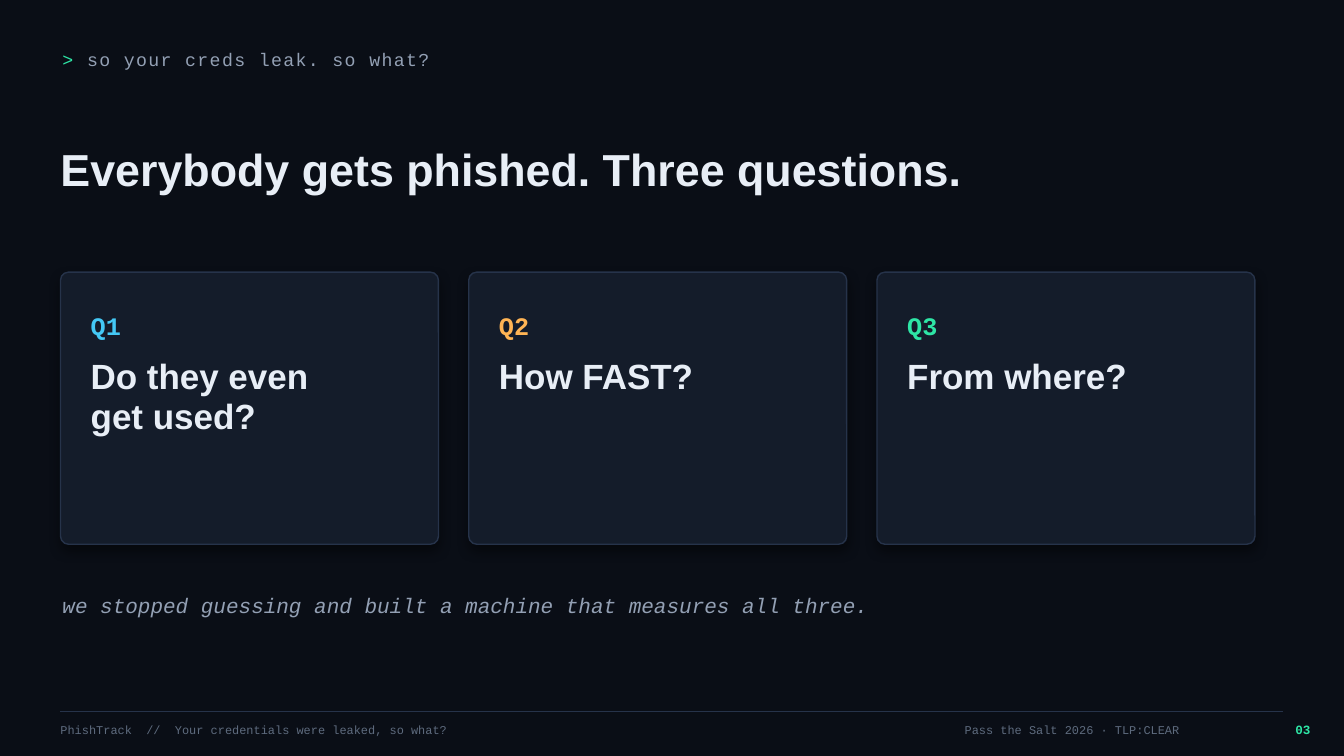
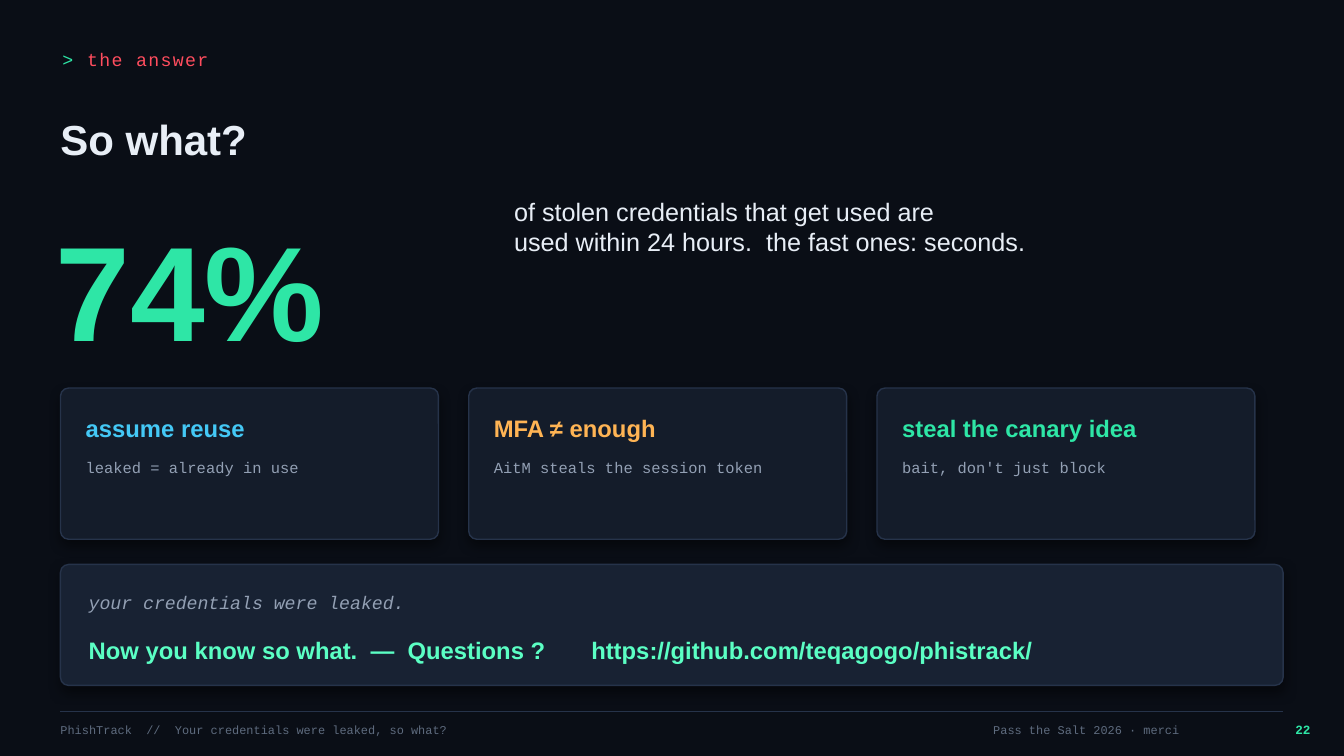
from lxml import etree
from pptx import Presentation
from pptx.dml.color import RGBColor
from pptx.enum import shapes, text
from pptx.oxml.ns import qn
from pptx.util import Pt

# Colours and fonts
BG = RGBColor(0x0A, 0x0E, 0x16)
CARD = RGBColor(0x14, 0x1C, 0x2A)
PANEL = RGBColor(0x18, 0x22, 0x33)
EDGE = RGBColor(0x26, 0x33, 0x4A)
WHITE = RGBColor(0xE8, 0xEE, 0xF6)
MUTED = RGBColor(0x93, 0xA0, 0xB4)
DIM = RGBColor(0x5E, 0x6B, 0x7E)
BLUE = RGBColor(0x44, 0xC8, 0xF5)
ORANGE = RGBColor(0xFF, 0xB4, 0x54)
GREEN = RGBColor(0x2E, 0xE6, 0xA6)
MINT = RGBColor(0x5B, 0xFF, 0xC4)
RED = RGBColor(0xFF, 0x4D, 0x5E)
SANS, MONO = "Arial", "Courier New"

# Layout, in points
LEFT, WIDTH = 43.2, 873.36
CARD_W, CARD_GAP = 270, 21.6
RADIUS = 5.76
ACCENTS = [BLUE, ORANGE, GREEN]

# Content
FOOTER = "PhishTrack  //  Your credentials were leaked, so what?"
QUESTIONS = {
    "kicker": "so your creds leak. so what?",
    "title": "Everybody gets phished. Three questions.",
    "cards": [
        ("Q1", "Do they even\nget used?"),
        ("Q2", "How FAST?"),
        ("Q3", "From where?"),
    ],
    "closing": "we stopped guessing and built a machine that measures all three.",
    "event": "Pass the Salt 2026 · TLP:CLEAR",
    "number": "03",
}
ANSWER = {
    "kicker": "the answer",
    "title": "So what?",
    "figure": "74%",
    "claim": "of stolen credentials that get used are\n"
             "used within 24 hours.  the fast ones: seconds.",
    "cards": [
        ("assume reuse", "leaked = already in use"),
        ("MFA ≠ enough", "AitM steals the session token"),
        ("steal the canary idea", "bait, don't just block"),
    ],
    "recap": "your credentials were leaked.",
    "closing": "Now you know so what.  —  Questions ?\t"
               "https://github.com/teqagogo/phistrack/",
    "event": "Pass the Salt 2026 · merci",
    "number": "22",
}


def style(r, size, color, font=SANS, bold=False, italic=False):
    f = r.font
    f.size, f.name, f.bold, f.italic = Pt(size), font, bold, italic
    f.color.rgb = color


def add_text(s, x, y, w, h, content, size, color, font=SANS, bold=False, italic=False,
             align=text.PP_ALIGN.LEFT, anchor=text.MSO_ANCHOR.MIDDLE, spacing=None):
    tf = s.shapes.add_textbox(Pt(x), Pt(y), Pt(w), Pt(h)).text_frame
    tf.margin_left = tf.margin_top = tf.margin_right = tf.margin_bottom = 0
    tf.word_wrap = True
    tf.vertical_anchor = anchor
    tf.text = content
    for p in tf.paragraphs:
        p.alignment = align
        p.line_spacing = spacing
        for r in p.runs:
            style(r, size, color, font, bold, italic)
    return tf


def add_panel(s, x, y, w, h, fill):
    sp = s.shapes.add_shape(shapes.MSO_SHAPE.ROUNDED_RECTANGLE, Pt(x), Pt(y), Pt(w), Pt(h))
    sp.adjustments[0] = RADIUS / h
    sp.fill.solid()
    sp.fill.fore_color.rgb = fill
    sp.line.color.rgb = EDGE
    sp.line.width = Pt(1)
    # Soft shadow straight below
    sp.shadow.inherit = False
    effects = sp._element.spPr.find(qn("a:effectLst"))
    shadow = etree.SubElement(effects, qn("a:outerShdw"), blurRad=str(Pt(9)), dist=str(Pt(4)),
                              dir="5400000", algn="bl", rotWithShape="0")
    black = etree.SubElement(shadow, qn("a:srgbClr"), val="000000")
    etree.SubElement(black, qn("a:alpha"), val="45000")


def add_cards(s, cards, y, h):
    """Draw the row of cards and yield left edge, accent and texts of each."""
    for i, (accent, (head, body)) in enumerate(zip(ACCENTS, cards)):
        x = LEFT + i * (CARD_W + CARD_GAP)
        add_panel(s, x, y, CARD_W, h, CARD)
        yield x, accent, head, body


def add_slide(prs, data, kicker_color, title_y, title_h, title_size):
    s = prs.slides.add_slide(prs.slide_layouts[6])
    s.background.fill.solid()
    s.background.fill.fore_color.rgb = BG

    # Kicker and title
    p = add_text(s, 44.64, 30.24, 864, 24.48, "> ", 13, GREEN, MONO).paragraphs[0]
    r = p.add_run()
    r.text = data["kicker"]
    style(r, 13, kicker_color, MONO)
    for r in p.runs:
        r._r.get_or_add_rPr().set("spc", "100")
    add_text(s, LEFT, title_y, 871.2, title_h, data["title"], title_size, WHITE,
             bold=True, spacing=0.95)

    # Footer
    rule = s.shapes.add_connector(shapes.MSO_CONNECTOR.STRAIGHT,
                                  Pt(LEFT), Pt(508.32), Pt(LEFT + WIDTH), Pt(508.32))
    rule.line.color.rgb = EDGE
    rule.line.width = Pt(0.75)
    etree.SubElement(rule._element.spPr, qn("a:effectLst"))
    y, h, right = 509.76, 23.04, text.PP_ALIGN.RIGHT
    add_text(s, LEFT, y, 576, h, FOOTER, 8.5, DIM, MONO)
    add_text(s, 504, y, 338.4, h, data["event"], 8.5, DIM, MONO, align=right)
    add_text(s, 896.4, y, 39.6, h, data["number"], 9, GREEN, MONO, bold=True, align=right)
    return s


def build_questions(prs):
    d = QUESTIONS
    s = add_slide(prs, d, MUTED, 86.4, 72, 32)
    for x, accent, label, question in add_cards(s, d["cards"], 194.4, 194.4):
        add_text(s, x + 21.6, 214.56, 144, 36, label, 18, accent, MONO, bold=True)
        add_text(s, x + 21.6, 255.6, 226.8, 108, question, 25, WHITE, bold=True,
                 anchor=text.MSO_ANCHOR.TOP, spacing=0.95)
    add_text(s, 44.64, 410.4, WIDTH, 43.2, d["closing"], 15, MUTED, MONO, italic=True)


def build_answer(prs):
    d = ANSWER
    s = add_slide(prs, d, RED, 79.2, 43.2, 30)
    # Key figure
    add_text(s, 39.6, 118.8, 432, 172.8, d["figure"], 96, GREEN, bold=True)
    add_text(s, 367.2, 140.4, 540, 43.2, d["claim"], 18, WHITE)
    # Takeaways
    for x, accent, head, body in add_cards(s, d["cards"], 277.2, 108):
        add_text(s, x + 18, 288, 237.6, 36, head, 17, accent, bold=True)
        add_text(s, x + 18, 327.6, 237.6, 50.4, body, 11, MUTED, MONO,
                 anchor=text.MSO_ANCHOR.TOP)
    # Closing panel, with a tab stop before the address
    add_panel(s, LEFT, 403.2, WIDTH, 86.4, PANEL)
    add_text(s, 63.36, 414.72, 833.04, 30.24, d["recap"], 13, MUTED, MONO, italic=True)
    tf = add_text(s, 63.36, 446.4, 833.04, 36, d["closing"], 17, MINT, bold=True)
    pPr = tf.paragraphs[0]._p.get_or_add_pPr()
    tabs = etree.SubElement(pPr, qn("a:tabLst"))
    etree.SubElement(tabs, qn("a:tab"), pos=str(Pt(359)), algn="l")


def main():
    prs = Presentation()
    prs.slide_width, prs.slide_height = Pt(960), Pt(540)
    build_questions(prs)
    build_answer(prs)
    prs.save("out.pptx")


if __name__ == "__main__":
    main()
